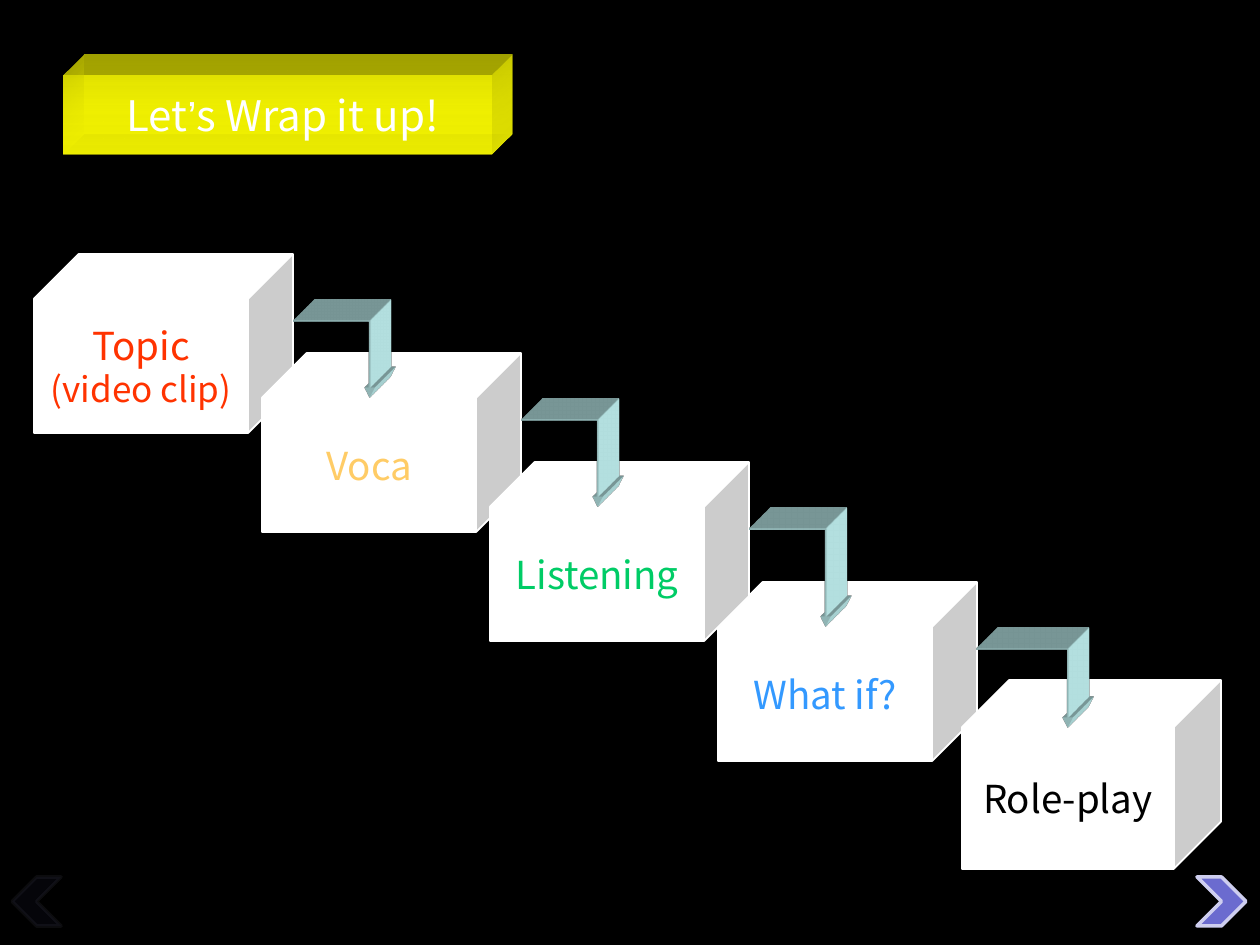
from lxml.etree import SubElement
from pptx import Presentation
from pptx.dml.color import RGBColor
from pptx.enum.shapes import MSO_CONNECTOR, MSO_SHAPE
from pptx.enum.text import MSO_ANCHOR, PP_ALIGN
from pptx.oxml import parse_xml
from pptx.oxml.ns import nsdecls, qn
from pptx.util import Emu, Pt

COLORS = {
    "background": "000000", "white": "FFFFFF", "yellow": "FFFF00",
    "dark_yellow": "EFEF00", "red": "FF3300", "orange": "FFCC66",
    "green": "00CC66", "blue": "3399FF", "black": "000000",
    "arrow": "CCFFFF", "button": "6B6BCF", "button_edge": "CECEEF",
}
FONT = "Noto Sans CJK KR"
CUBE_WIDTH = 259
CUBE_DEPTH = 0.25


def px(length):
    return Emu(round(length * 914400 / 126))


def rgb(name):
    return RGBColor.from_string(COLORS[name])


def set_alpha(color_element, percent):
    SubElement(color_element, qn("a:alpha")).set("val", str(percent * 1000))


class SlideBuilder:
    def __init__(self, slide):
        self.slide = slide
        slide.background.fill.solid()
        slide.background.fill.fore_color.rgb = rgb("background")

    def shape(self, kind, left, top, width, height, fill, line=None, weight=1):
        shape = self.slide.shapes.add_shape(
            kind, px(left), px(top), px(width), px(height))
        shape.shadow.inherit = False
        shape.fill.solid()
        shape.fill.fore_color.rgb = rgb(fill)
        if line:
            shape.line.color.rgb = rgb(line)
            shape.line.width = Pt(weight)
        else:
            shape.line.fill.background()
        return shape

    def text(self, shape, paragraphs, color, wrap=True):
        """Each paragraph is a list of (text, size, font) runs."""
        frame = shape.text_frame
        frame.word_wrap = wrap
        frame.vertical_anchor = MSO_ANCHOR.MIDDLE
        for index, runs in enumerate(paragraphs):
            paragraph = frame.add_paragraph() if index else frame.paragraphs[0]
            paragraph.alignment = PP_ALIGN.CENTER
            for text, size, font in runs:
                run = paragraph.add_run()
                run.text = text
                run.font.size = Pt(size)
                run.font.name = font
                run.font.color.rgb = rgb(color)
                east_asian = SubElement(run.font._element, qn("a:ea"))
                east_asian.set("typeface", font)

    def extrude(self, shape, color):
        properties = shape._element.spPr
        properties.append(parse_xml(
            f'<a:scene3d {nsdecls("a")}><a:camera prst="legacyObliqueTopRight"/>'
            '<a:lightRig rig="legacyFlat3" dir="b"/></a:scene3d>'))
        properties.append(parse_xml(
            f'<a:sp3d {nsdecls("a")} extrusionH="430200" prstMaterial="legacyMatte">'
            '<a:bevelT w="13500" h="13500" prst="angle"/>'
            '<a:bevelB w="13500" h="13500" prst="angle"/>'
            f'<a:extrusionClr><a:srgbClr val="{COLORS[color]}"/></a:extrusionClr>'
            '</a:sp3d>'))

    def banner(self, left, top, width, height, runs):
        shape = self.shape(MSO_SHAPE.RECTANGLE, left, top, width, height, "yellow")
        shape.fill.gradient()
        shape.fill.gradient_angle = 270
        for stop, color in zip(shape.fill.gradient_stops, ("yellow", "dark_yellow")):
            stop.color.rgb = rgb(color)
        set_alpha(next(shape._element.spPr.iter(qn("a:srgbClr"))), 64)
        self.extrude(shape, "yellow")
        self.text(shape, [runs], "white", wrap=False)

    def cube(self, left, top, height, lines, color):
        shape = self.shape(MSO_SHAPE.CUBE, left, top, CUBE_WIDTH, height,
                           "white", "white")
        shape.adjustments[0] = CUBE_DEPTH
        self.text(shape, [[(text, size, FONT)] for text, size in lines], color)

    def bent_arrow(self, left, top, right, bottom):
        connector = self.slide.shapes.add_connector(
            MSO_CONNECTOR.ELBOW, px(left), px(top), px(right), px(bottom))
        connector.line.color.rgb = rgb("arrow")
        connector.line.width = Pt(1)
        properties = connector._element.spPr
        properties.find(qn("a:prstGeom")).set("prst", "bentConnector2")
        SubElement(properties.find(qn("a:ln")), qn("a:tailEnd")).set("type", "triangle")
        SubElement(properties, qn("a:effectLst"))
        self.extrude(connector, "arrow")

    def button(self, left, top, size, backward=False):
        shape = self.shape(MSO_SHAPE.CHEVRON, left, top, size, size,
                           "button", "button_edge", 2)
        if backward:
            shape.rotation = 180
            for color in shape._element.spPr.iter(qn("a:srgbClr")):
                set_alpha(color, 5)


def main():
    presentation = Presentation()
    presentation.slide_width, presentation.slide_height = px(1260), px(945)
    builder = SlideBuilder(
        presentation.slides.add_slide(presentation.slide_layouts[6]))

    # Heading
    builder.banner(64, 75, 428, 80, [
        (" Let", 24, FONT), ("’", 24, "Arial"), ("s Wrap it up!", 24, FONT)])

    # Steps of the lesson: left, top, height, lines, color
    steps = [
        (34, 254, 179, [("Topic", 22), ("(video clip)", 20)], "red"),
        (262, 353, 179, [("Voca", 22)], "orange"),
        (490, 462, 179, [("Listening", 22)], "green"),
        (718, 582, 179, [("What if?", 22)], "blue"),
        (962, 680, 189, [("Role-play", 22)], "black"),
    ]
    for index in (0, 1, 3, 2, 4):  # "Listening" overlaps "What if?"
        builder.cube(*steps[index])

    # Arrows from each cube's side to the front top edge of the next
    for (left, top, height, *_), (next_left, next_top, next_height, *_) in zip(
            steps, steps[1:]):
        next_depth = next_height * CUBE_DEPTH
        builder.bent_arrow(
            left + CUBE_WIDTH, top + height * (1 - CUBE_DEPTH) / 2,
            next_left + (CUBE_WIDTH - next_depth) / 2, next_top + next_depth)

    # Navigation buttons
    builder.button(12, 877, 49, backward=True)
    builder.button(1197, 877, 49)

    presentation.save("out.pptx")


if __name__ == "__main__":
    main()
